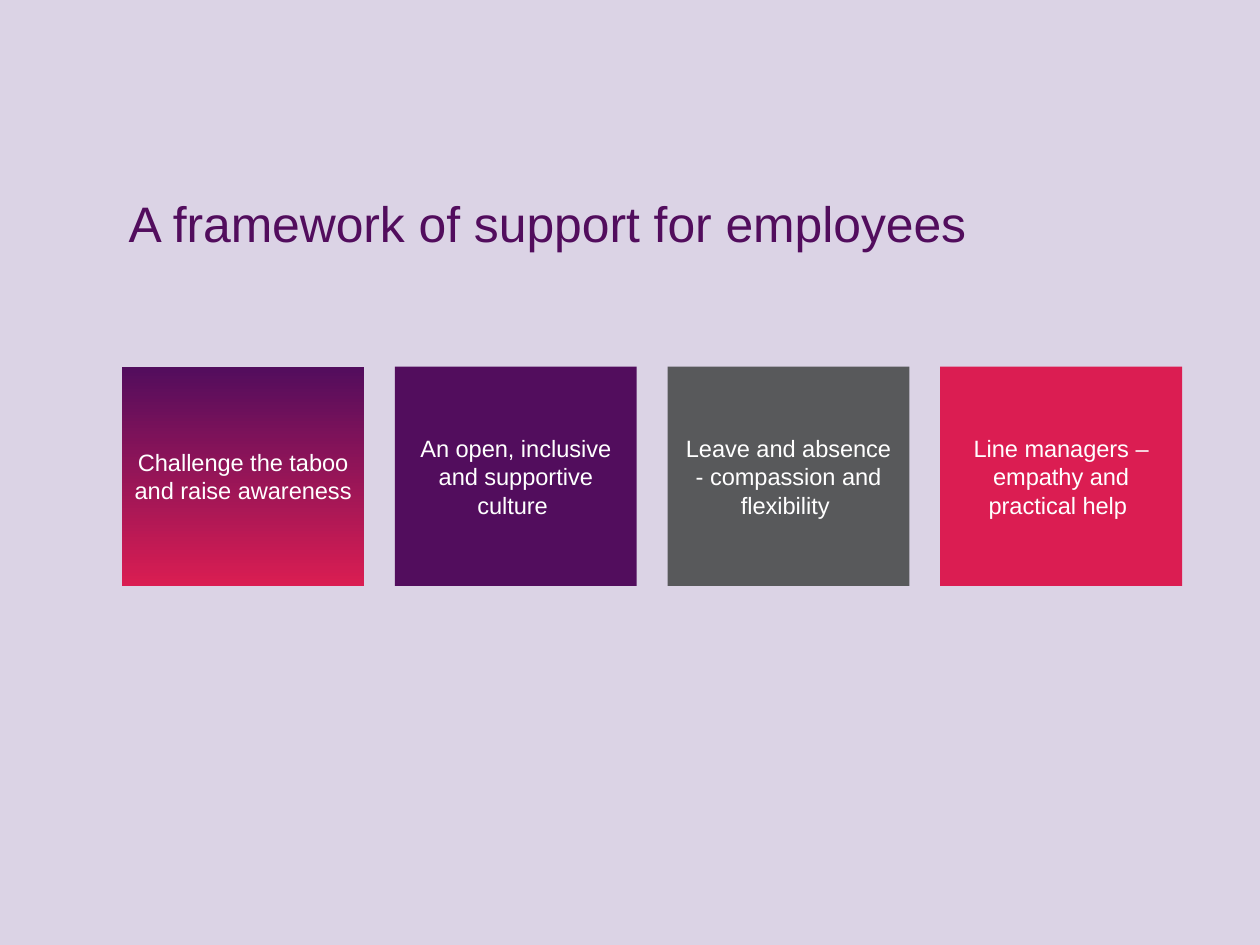
from dataclasses import dataclass

from pptx import Presentation
from pptx.dml.color import RGBColor
from pptx.enum.shapes import MSO_SHAPE
from pptx.enum.text import MSO_ANCHOR, MSO_AUTO_SIZE, PP_ALIGN
from pptx.util import Inches, Pt


@dataclass(frozen=True)
class Theme:
    font: str = "Arial"
    title_size: float = 28.5
    card_size: float = 13.5
    background: str = "DBD3E5"
    purple: str = "520D5D"
    rose: str = "DA1D52"
    red: str = "DB1D52"
    grey: str = "58595B"
    white: str = "FFFFFF"


theme = Theme()


def add_span(para, text, size, color):
    span = para.add_run()
    span.text = text
    span.font.name = theme.font
    span.font.size = Pt(size)
    span.font.color.rgb = RGBColor.from_string(color)


# Page and background
deck = Presentation()
deck.slide_width, deck.slide_height = Inches(10), Inches(7.5)
page = deck.slides.add_slide(deck.slide_layouts[5])
page.background.fill.solid()
page.background.fill.fore_color.rgb = RGBColor.from_string(theme.background)

# Title
title = page.shapes.title
title.left, title.top = Inches(0.92), Inches(1.17)
title.width, title.height = Inches(8.51), Inches(0.89)
title.text_frame.auto_size = MSO_AUTO_SIZE.NONE
title.text_frame.vertical_anchor = MSO_ANCHOR.BOTTOM
para = title.text_frame.paragraphs[0]
para.alignment = PP_ALIGN.LEFT
para.line_spacing = 0.9
add_span(para, "A framework of support for employees", theme.title_size, theme.purple)

# Row of support cards; two colours make a gradient from top to bottom
cards = [
    ("Challenge the taboo and raise awareness ", [theme.purple, theme.rose]),
    ("An open, inclusive and supportive culture ", [theme.purple]),
    ("Leave and absence - compassion and flexibility ", [theme.grey]),
    ("Line managers – empathy and practical help ", [theme.red]),
]
card_left, card_top, card_pitch = 0.97, 2.91, 2.164
card_width, card_height = 1.92, 1.74

for index, (text, colors) in enumerate(cards):
    card = page.shapes.add_shape(
        MSO_SHAPE.RECTANGLE,
        Inches(card_left + index * card_pitch), Inches(card_top),
        Inches(card_width), Inches(card_height),
    )
    card.shadow.inherit = False
    card.line.fill.background()
    if len(colors) > 1:
        card.fill.gradient()
        card.fill.gradient_angle = 270
        for stop, color in zip(card.fill.gradient_stops, colors):
            stop.color.rgb = RGBColor.from_string(color)
    else:
        card.fill.solid()
        card.fill.fore_color.rgb = RGBColor.from_string(colors[0])

    frame = card.text_frame
    frame.word_wrap = True
    frame.vertical_anchor = MSO_ANCHOR.MIDDLE
    para = frame.paragraphs[0]
    para.alignment = PP_ALIGN.CENTER
    add_span(para, text, theme.card_size, theme.white)

deck.save("out.pptx")
